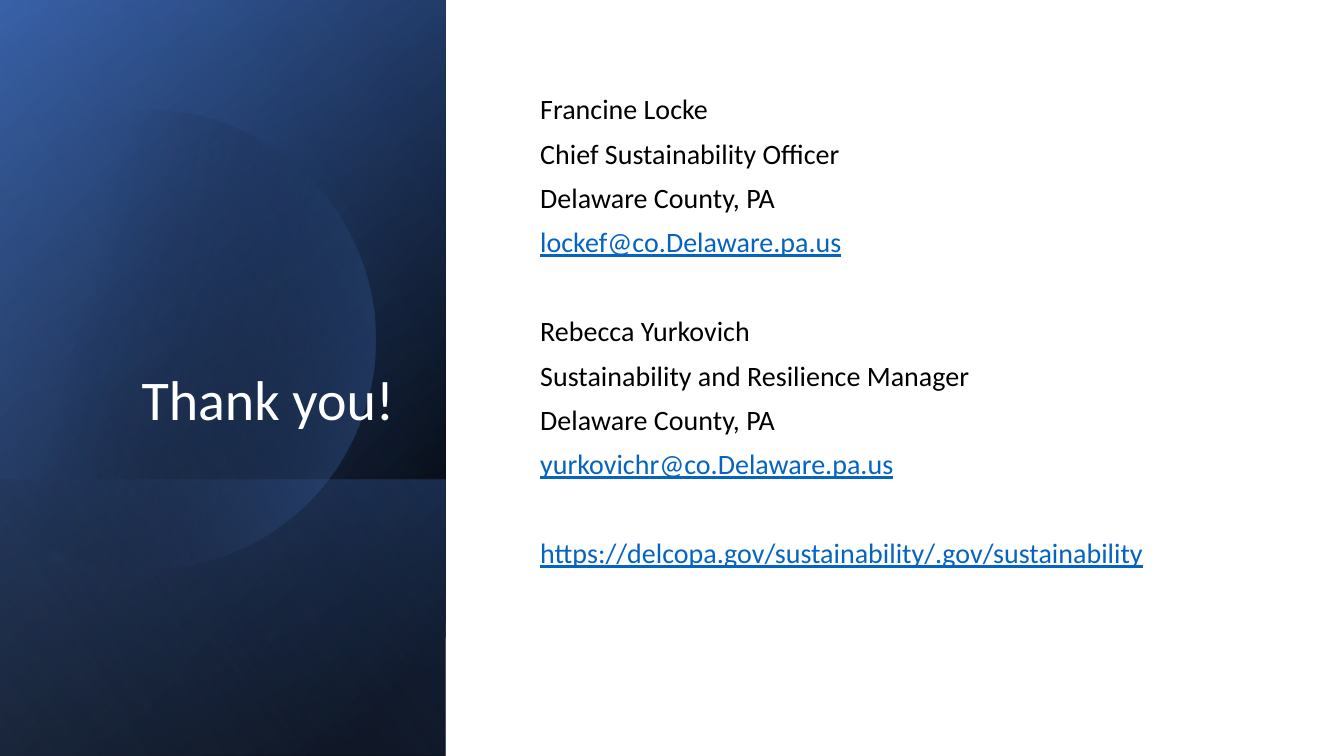
from math import cos, radians, sin

from pptx import Presentation
from pptx.dml.color import RGBColor
from pptx.enum.shapes import MSO_SHAPE
from pptx.enum.text import MSO_ANCHOR as Anchor, MSO_AUTO_SIZE as AutoSize, PP_ALIGN as Align
from pptx.oxml.ns import qn
from pptx.util import Cm, Pt
from lxml.etree import SubElement

COLORS = {
    "white": "FFFFFF",
    "black": "000000",
    "navy": "2F5597",
    "blue": "4472C4",
    "pale": "8FAADC",
    "link": "0563C1",
}
SLIDE_W, SLIDE_H = 33.87, 19.05
PANEL_W, BAND_TOP = 11.23, 12.09

# Each group: (line, colour name)
CONTACTS = [
    [("Francine Locke", "black"),
     ("Chief Sustainability Officer", "black"),
     ("Delaware County, PA", "black"),
     ("lockef@co.Delaware.pa.us", "link")],
    [("Rebecca Yurkovich", "black"),
     ("Sustainability and Resilience Manager", "black"),
     ("Delaware County, PA", "black"),
     ("yurkovichr@co.Delaware.pa.us", "link")],
    [("https://delcopa.gov/sustainability/.gov/sustainability", "link")],
]


def rgb(name):
    return RGBColor.from_string(COLORS[name])


def set_gradient(shape, stops, angle):
    """Stops are (position %, colour, opacity %); the angle runs clockwise."""
    shape.fill.gradient()
    shape.fill.gradient_angle = 360 - angle
    for stop, (position, color, opacity) in zip(shape.fill.gradient_stops, stops):
        stop.position = position / 100
        stop.color.rgb = rgb(color)
    color_elements = shape.element.spPr.iter(qn("a:srgbClr"))
    for element, (_, _, opacity) in zip(color_elements, stops):
        if opacity < 100:
            SubElement(element, qn("a:alpha"), val=str(opacity * 1000))


def strip_outline(shape):
    shape.line.fill.background()
    shape.shadow.inherit = False


def add_panel(slide, top, height, stops, angle):
    panel = slide.shapes.add_shape(
        MSO_SHAPE.RECTANGLE, Cm(0), Cm(top), Cm(PANEL_W), Cm(height))
    set_gradient(panel, stops, angle)
    strip_outline(panel)


def add_cut_circle(slide, center_x, center_y, radius, half_sweep, stops, angle):
    """Circle whose left side is cut off by a vertical chord."""
    steps = 120
    turns = [radians(half_sweep * (2 * i / steps - 1)) for i in range(steps + 1)]
    points = [(Cm(center_x + radius * cos(t)), Cm(center_y + radius * sin(t)))
              for t in turns]
    builder = slide.shapes.build_freeform(*points[0])
    builder.add_line_segments(points[1:], close=True)
    circle = builder.convert_to_shape()
    set_gradient(circle, stops, angle)
    strip_outline(circle)


def write_text(paragraph, text, size=20, color="black", align=Align.LEFT,
               underline=False, space_before=10):
    paragraph.alignment = align
    paragraph.line_spacing = 0.9
    paragraph.space_before = Pt(space_before)
    run = paragraph.add_run()
    run.text = text
    font = run.font
    font.name, font.size, font.underline = "Calibri", Pt(size), underline
    font.color.rgb = rgb(color)


def place(placeholder, left, top, width, height, anchor):
    placeholder.left, placeholder.top = Cm(left), Cm(top)
    placeholder.width, placeholder.height = Cm(width), Cm(height)
    frame = placeholder.text_frame
    frame.word_wrap = True
    frame.auto_size = AutoSize.NONE
    frame.vertical_anchor = anchor
    # Bring the text in front of the panels
    placeholder.element.getparent().append(placeholder.element)
    return frame


def remove_bullet(paragraph):
    properties = paragraph._p.get_or_add_pPr()
    properties.set("marL", "0")
    properties.set("indent", "0")
    SubElement(properties, qn("a:buNone"))


def add_contacts(body):
    frame = place(body, 13.36, 1.8, 18.21, 15.42, Anchor.MIDDLE)
    frame.margin_bottom = Cm(2.38)
    paragraph = frame.paragraphs[0]
    for group_index, group in enumerate(CONTACTS):
        for line_index, (line, color) in enumerate(group):
            if group_index or line_index:
                paragraph = frame.add_paragraph()
            starts_group = group_index and not line_index
            write_text(paragraph, line, color=color, underline=color == "link",
                       space_before=42 if starts_group else 10)
            remove_bullet(paragraph)


def main():
    prs = Presentation()
    prs.slide_width, prs.slide_height = Cm(SLIDE_W), Cm(SLIDE_H)
    slide = prs.slides.add_slide(prs.slide_layouts[1])
    slide.background.fill.solid()
    slide.background.fill.fore_color.rgb = rgb("white")

    # Left panel: layered gradients
    add_panel(slide, 0, SLIDE_H, [(8, "black", 100), (100, "navy", 100)], 220)
    add_panel(slide, 0, SLIDE_H, [(0, "black", 0), (99, "blue", 46)], 240)
    add_panel(slide, BAND_TOP, SLIDE_H - BAND_TOP,
              [(2, "blue", 29), (100, "black", 30)], 140)
    add_cut_circle(slide, 3.68, 8.56, 5.79, 134.5,
                   [(29, "black", 0), (100, "blue", 43)], 14)
    add_panel(slide, 0, SLIDE_H, [(0, "black", 0), (99, "pale", 11)], 150)

    # Title
    title = place(slide.shapes.title, 1.3, 1.63, 8.89, 9.4, Anchor.BOTTOM)
    write_text(title.paragraphs[0], "Thank you!", size=40, color="white",
               align=Align.RIGHT, space_before=0)

    # Contact details
    add_contacts(slide.placeholders[1])

    prs.save("out.pptx")


if __name__ == "__main__":
    main()
